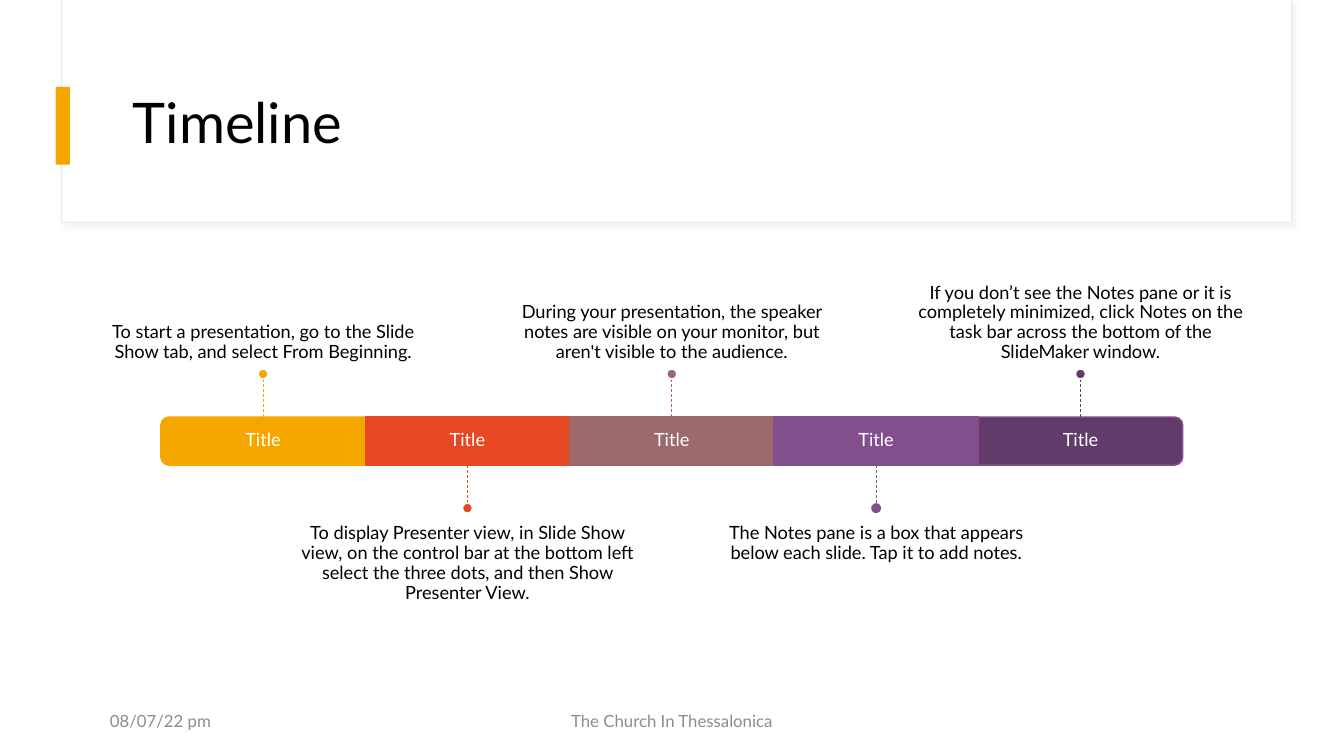
"""Build a slide with a five-step timeline and callouts alternating above and below the bar."""
import pptx
import pptx.dml.color
import pptx.enum.dml
import pptx.enum.shapes
import pptx.enum.text
import pptx.oxml
import pptx.oxml.ns
import pptx.util

Cm = pptx.util.Cm
Pt = pptx.util.Pt
RGBColor = pptx.dml.color.RGBColor
SHAPE = pptx.enum.shapes.MSO_SHAPE
ANCHOR = pptx.enum.text.MSO_ANCHOR
ALIGN = pptx.enum.text.PP_ALIGN

WHITE = RGBColor(0xFF, 0xFF, 0xFF)
BLACK = RGBColor(0, 0, 0)
GRAY = RGBColor(0x8C, 0x8C, 0x8C)
PALE = RGBColor(0xE9, 0xE9, 0xE9)
AMBER = RGBColor(0xF5, 0xA7, 0x00)
ORANGE = RGBColor(0xE6, 0x48, 0x23)
ROSE = RGBColor(0x9C, 0x6A, 0x6A)
VIOLET = RGBColor(0x82, 0x4F, 0x8C)
PLUM = RGBColor(0x61, 0x3B, 0x69)

HEADING = "Timeline"
DATE = "08/07/22 pm"
FOOTER = "The Church In Thessalonica"
STEPS = [
    {"title": "Title", "fill": AMBER, "outline": AMBER, "dot_outline": WHITE, "rotation": 270,
     "note": "To start a presentation, go to the Slide Show tab, and select From Beginning."},
    {"title": "Title", "fill": ORANGE, "outline": ORANGE, "dot_outline": WHITE, "rotation": 0,
     "note": "To display Presenter view, in Slide Show view, on the control bar at the bottom left "
             "select the three dots, and then Show Presenter View."},
    {"title": "Title", "fill": ROSE, "outline": ROSE, "dot_outline": WHITE, "rotation": 0,
     "note": "During your presentation, the speaker notes are visible on your monitor, "
             "but aren't visible to the audience."},
    {"title": "Title", "fill": VIOLET, "outline": VIOLET, "dot_outline": None, "rotation": 0,
     "note": "The Notes pane is a box that appears below each slide. Tap it to add notes."},
    {"title": "Title", "fill": PLUM, "outline": VIOLET, "dot_outline": WHITE, "rotation": 90,
     "note": "If you don’t see the Notes pane or it is completely minimized, click Notes on the "
             "task bar across the bottom of the SlideMaker window."},
]

FIRST_CENTER, STEP_WIDTH = 6.63, 5.15
BAR_TOP, BAR_HEIGHT = 10.51, 1.21
STEM, DOT = 0.96, 0.25
NOTE_WIDTH, NOTE_HEIGHT, NOTE_INSET = 8.59, 4.24, 0.28
SHADOW = (
    '<a:effectLst %s><a:outerShdw blurRad="50800" dist="38100" dir="2700000" algn="tl" rotWithShape="0">'
    '<a:srgbClr val="D9D9D9"><a:alpha val="30000"/></a:srgbClr></a:outerShdw></a:effectLst>'
    % pptx.oxml.ns.nsdecls("a")
)


def set_all(target, values):
    for name, value in values.items():
        setattr(target, name, value)


def add_shape(slide, kind, box, fill, outline=None, weight=1):
    shape = slide.shapes.add_shape(kind, *map(Cm, box))
    shape.shadow.inherit = False
    shape.fill.solid()
    shape.fill.fore_color.rgb = fill
    if outline is None:
        shape.line.fill.background()
    else:
        shape.line.color.rgb = outline
        shape.line.width = Pt(weight)
    return shape


def add_text(slide, box, text, size, color, align=ALIGN.LEFT, anchor=ANCHOR.MIDDLE,
             insets=(0.25, 0.13, 0.25, 0.13), spacing=0.9):
    frame = slide.shapes.add_textbox(*map(Cm, box)).text_frame
    sides = ("margin_left", "margin_top", "margin_right", "margin_bottom")
    set_all(frame, {"word_wrap": True, "vertical_anchor": anchor, **dict(zip(sides, map(Cm, insets)))})
    paragraph = frame.paragraphs[0]
    set_all(paragraph, {"text": text, "alignment": align, "line_spacing": spacing})
    set_all(paragraph.runs[0].font, {"name": "Lato", "size": Pt(size)})
    paragraph.runs[0].font.color.rgb = color


def add_bar(slide, step, center):
    middle = BAR_TOP + BAR_HEIGHT / 2
    width, height = (BAR_HEIGHT, STEP_WIDTH) if step["rotation"] else (STEP_WIDTH, BAR_HEIGHT)
    kind = SHAPE.ROUND_2_SAME_RECTANGLE if step["rotation"] else SHAPE.RECTANGLE
    box = (center - width / 2, middle - height / 2, width, height)
    bar = add_shape(slide, kind, box, step["fill"], step["outline"])
    bar.rotation = step["rotation"]
    return bar


def add_step(slide, index, step):
    center = FIRST_CENTER + index * STEP_WIDTH
    above = index % 2 == 0
    edge = BAR_TOP if above else BAR_TOP + BAR_HEIGHT
    tip = edge - STEM if above else edge + STEM
    dot_top = tip - DOT if above else tip
    note_top = dot_top + DOT - NOTE_INSET / 2 - NOTE_HEIGHT if above else dot_top + DOT
    note_insets = (0, 0, 0, NOTE_INSET) if above else (0, NOTE_INSET, 0, 0)

    bar = add_bar(slide, step, center)
    add_text(slide, (center - STEP_WIDTH / 2, BAR_TOP, STEP_WIDTH, BAR_HEIGHT), step["title"],
             13, WHITE, ALIGN.CENTER, insets=(NOTE_INSET,) * 4)
    add_text(slide, (center - NOTE_WIDTH / 2, note_top, NOTE_WIDTH, NOTE_HEIGHT), step["note"],
             13, BLACK, ALIGN.CENTER, ANCHOR.BOTTOM if above else ANCHOR.TOP, note_insets)

    stem = slide.shapes.add_connector(pptx.enum.shapes.MSO_CONNECTOR.STRAIGHT,
                                      Cm(center), Cm(edge), Cm(center), Cm(tip))
    if not step["rotation"]:
        stem.begin_connect(bar, 0 if above else 2)
    set_all(stem.line, {"width": Pt(0.5), "dash_style": pptx.enum.dml.MSO_LINE.DASH})
    stem.line.color.rgb = step["fill"]
    stem._element.spPr.append(pptx.oxml.parse_xml("<a:effectLst %s/>" % pptx.oxml.ns.nsdecls("a")))
    add_shape(slide, SHAPE.OVAL, (center - DOT / 2, dot_top, DOT, DOT), step["fill"], step["dot_outline"])


def main():
    presentation = pptx.Presentation()
    set_all(presentation, {"slide_width": Cm(33.87), "slide_height": Cm(19.05)})
    slide = presentation.slides.add_slide(presentation.slide_layouts[6])

    header = add_shape(slide, SHAPE.RECTANGLE, (1.55, 0, 31.01, 5.61), WHITE, PALE, 0.75)
    properties = header._element.spPr
    properties.replace(properties.find(pptx.oxml.ns.qn("a:effectLst")), pptx.oxml.parse_xml(SHADOW))
    add_shape(slide, SHAPE.RECTANGLE, (1.4, 2.19, 0.36, 1.96), AMBER)
    add_text(slide, (3.1, 1.52, 28.24, 3.28), HEADING, 40, BLACK)

    for index, step in enumerate(STEPS):
        add_step(slide, index, step)

    add_text(slide, (2.52, 17.65, 7.62, 1.02), DATE, 12, GRAY, spacing=1)
    add_text(slide, (11.22, 17.65, 11.43, 1.02), FOOTER, 12, GRAY, ALIGN.CENTER, spacing=1)
    presentation.save("out.pptx")


if __name__ == "__main__":
    main()
